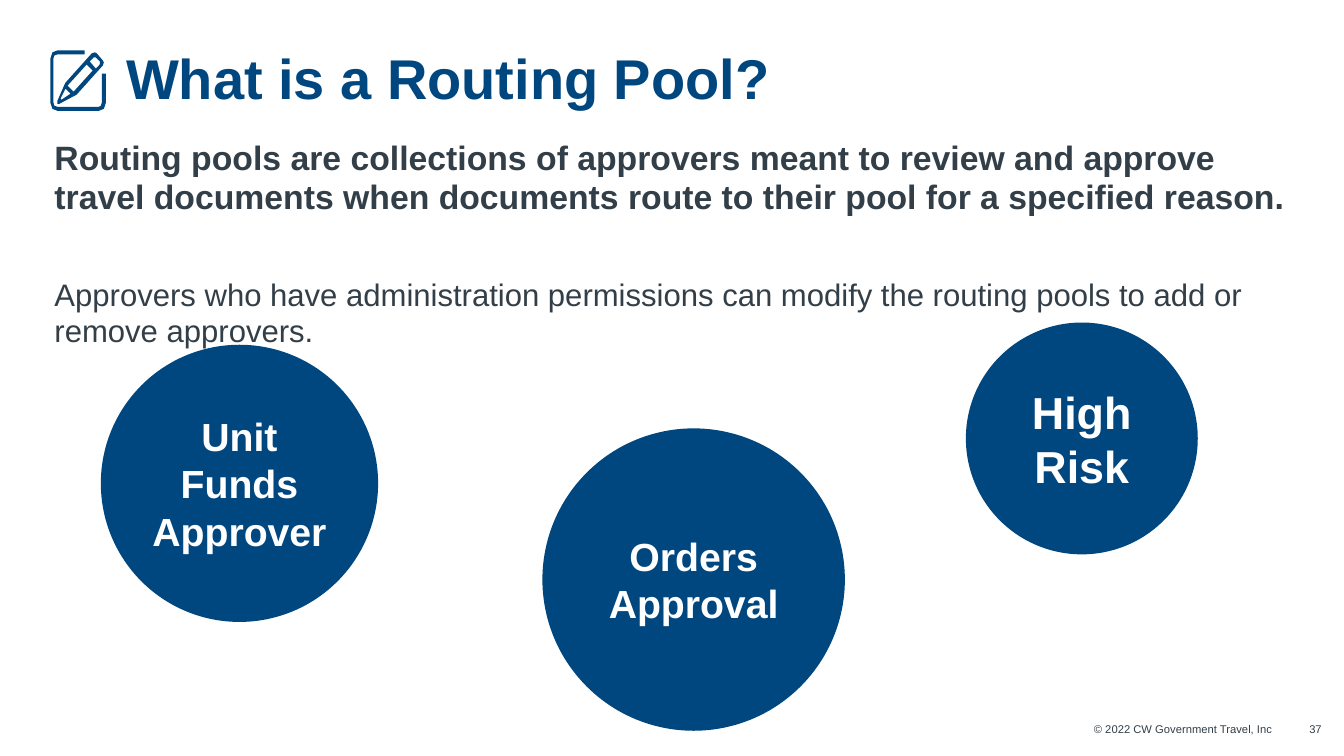
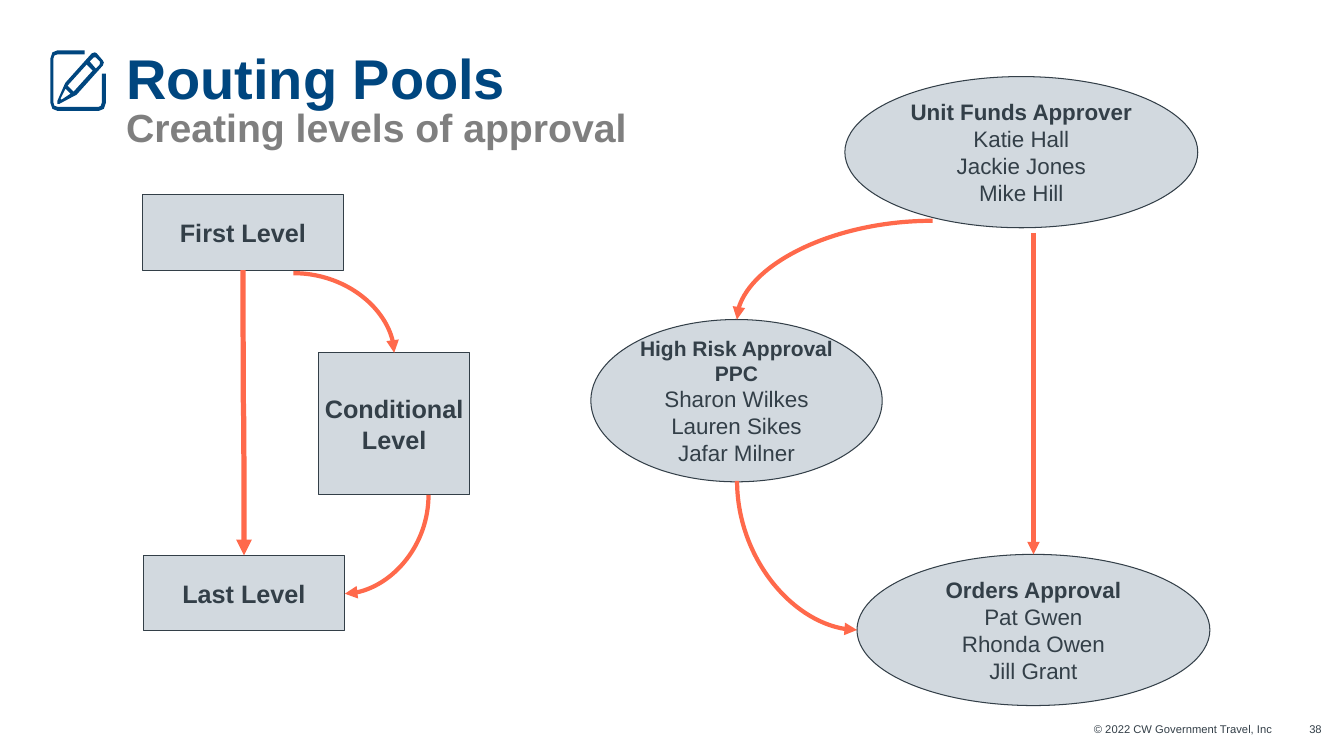
from lxml.etree import SubElement
from pptx import Presentation
from pptx.dml.color import RGBColor
from pptx.enum.shapes import MSO_CONNECTOR as LINK, MSO_SHAPE as SHAPE
from pptx.enum.text import MSO_ANCHOR as ANCHOR, MSO_AUTO_SIZE as FIT, PP_ALIGN as ALIGN
from pptx.oxml.ns import qn
from pptx.util import Inches, Pt

BLUE, DARK, GREY = "00467F", "333F48", "7F7F7F"
PALE, CORAL, WHITE = "D2D9DF", "FF694B", "FFFFFF"
ICON = [
    [(101, 73), (101, 102), (100, 105), (98, 106), (57, 106), (54, 105), (53, 102),
     (53, 58), (54, 55), (57, 54), (84, 54), (84, 50), (57, 50), (52, 52), (50, 58),
     (50, 102), (52, 108), (57, 110), (98, 110), (103, 108), (105, 102), (105, 73)],
    [(64, 84), (57, 100), (57, 103), (59, 103), (74, 95), (76, 94), (102, 65),
     (103, 62), (102, 60), (96, 53), (94, 52), (91, 53), (65, 82)],
    [(93, 57), (95, 57), (99, 61), (99, 64), (95, 68), (89, 61)],
    [(86, 64), (92, 70), (73, 91), (67, 85)],
    [(70, 93), (61, 99), (60, 98), (65, 88)],
]


def tint(code):
    """Turn a hex string into a colour."""
    return RGBColor.from_string(code)


def apply(item, **vals):
    """Set each named value on the item."""
    for name, val in vals.items():
        setattr(item, name, val)


def style(font, size, code, bold=False):
    """Format a font."""
    apply(font, name="Arial", size=Pt(size), bold=bold)
    font.color.rgb = tint(code)


def place(shape, box):
    """Move and size a shape."""
    for name, val in zip(("left", "top", "width", "height"), box):
        setattr(shape, name, Inches(val))


def trim(frame):
    """Clear the insets of a frame and fix its text at the top."""
    apply(frame, margin_left=0, margin_top=0, margin_right=0, margin_bottom=0,
          word_wrap=True, auto_size=FIT.NONE, vertical_anchor=ANCHOR.TOP)


def fill(frame, rows, **form):
    """Write rows of text, size, colour and weight as paragraphs."""
    for i, (text, *look) in enumerate(rows):
        para = frame.add_paragraph() if i else frame.paragraphs[0]
        para.text = text
        apply(para, **form)
        style(para.font, *look)


def note(slide, text, box):
    """Add a small line of footer text."""
    label = slide.shapes.add_textbox(*map(Inches, box))
    trim(label.text_frame)
    fill(label.text_frame, [(text, 8, DARK)], alignment=ALIGN.RIGHT)


def icon(slide):
    """Draw the pencil and page beside the title."""
    first, *rest = ICON
    pen = slide.shapes.build_freeform(*first[0], scale=Inches(0.01))
    pen.add_line_segments(first[1:])
    for ring in rest:
        pen.move_to(*ring[0])
        pen.add_line_segments(ring[1:])
    shape = pen.convert_to_shape()
    shape.shadow.inherit = False
    shape.fill.solid()
    shape.fill.fore_color.rgb = tint(BLUE)
    shape.line.fill.background()


def start(deck, layout, page, title, sub=""):
    """Add a slide with its title, icon and footer."""
    slide = deck.slides.add_slide(deck.slide_layouts[layout])
    head = slide.shapes.title
    place(head, (1.25, 0.53, 11.53, 0.92))
    trim(head.text_frame)
    para = head.text_frame.paragraphs[0]
    apply(para, alignment=ALIGN.LEFT, line_spacing=0.85)
    run = para.add_run()
    run.text = title
    style(run.font, 40, BLUE, True)
    if sub:
        para.add_line_break()
        run = para.add_run()
        run.text = sub
        style(run.font, 28, GREY, True)
    icon(slide)
    note(slide, "© 2022 CW Government Travel, Inc", (8.38, 7.17, 4.24, 0.14))
    note(slide, str(page), (12.88, 7.17, 0.23, 0.14))
    return slide


def body(slide, rows):
    """Fill the body placeholder with plain paragraphs."""
    hold = slide.placeholders[1]
    place(hold, (0.54, 1.39, 12.24, 1.69))
    trim(hold.text_frame)
    fill(hold.text_frame, rows, line_spacing=0.95, space_before=Pt(44))
    hold.text_frame.paragraphs[0].space_before = Pt(0)
    for para in hold.text_frame.paragraphs:
        props = para._p.get_or_add_pPr()
        apply_none = {"marL": "0", "indent": "0"}
        for name, val in apply_none.items():
            props.set(name, val)
        SubElement(props, qn("a:buNone"))


def node(slide, kind, box, rows, back, edge=None, wrap=False):
    """Add a filled shape with centred text."""
    shape = slide.shapes.add_shape(kind, *map(Inches, box))
    shape.shadow.inherit = False
    shape.fill.solid()
    shape.fill.fore_color.rgb = tint(back)
    if edge:
        shape.line.color.rgb = tint(edge)
        shape.line.width = Pt(0.75)
    else:
        shape.line.fill.background()
    apply(shape.text_frame, word_wrap=wrap, vertical_anchor=ANCHOR.MIDDLE)
    fill(shape.text_frame, rows, alignment=ALIGN.CENTER)


def arrow(slide, ends, kind=LINK.STRAIGHT, width=3):
    """Add a line with a head at its far end."""
    link = slide.shapes.add_connector(kind, *map(Inches, ends))
    link.line.color.rgb = tint(CORAL)
    link.line.width = Pt(width)
    props = link.element.spPr
    SubElement(props.find(qn("a:ln")), qn("a:tailEnd"), type="triangle")
    SubElement(props, qn("a:effectLst"))
    return props


def bend(slide, ends, down=False, form="curvedConnector2", width=3):
    """Add a curved arrow that sets off sideways, or down."""
    x1, y1, x2, y2 = ends
    turn = 0
    if down:
        mid_x, mid_y = (x1 + x2) / 2, (y1 + y2) / 2
        half_w, half_h = abs(y2 - y1) / 2, abs(x2 - x1) / 2
        turn, side = (90, 1) if x2 < x1 else (270, -1)
        ends = (mid_x - side * half_w, mid_y - half_h,
                mid_x + side * half_w, mid_y + half_h)
    props = arrow(slide, ends, LINK.CURVE, width)
    props.find(qn("a:prstGeom")).set("prst", form)
    props.find(qn("a:xfrm")).set("rot", str(turn * 60000))


def pools(deck):
    """Build the slide on what a pool is."""
    slide = start(deck, 1, 37, "What is a Routing Pool?")
    body(slide, [
        ("Routing pools are collections of approvers meant to review and approve "
         "travel documents when documents route to their pool for a specified reason.",
         24.1, DARK, True),
        ("Approvers who have administration permissions can modify the routing pools "
         "to add or remove approvers.", 22.2, DARK),
    ])
    for text, left, top, size, points in [
        ("Unit Funds Approver", 1, 3.42, 2.75, 28),
        ("High Risk", 9.58, 3.2, 2.3, 32),
        ("Orders Approval", 5.38, 4.25, 3, 28),
    ]:
        node(slide, SHAPE.OVAL, (left, top, size, size),
             [(text, points, WHITE, True)], BLUE, wrap=True)


def levels(deck):
    """Build the slide on levels of approval."""
    slide = start(deck, 5, 38, "Routing Pools", "Creating levels of approval")
    for box, *lines in [
        ((1.41, 1.93, 2, 0.75), "First Level"),
        ((1.42, 5.51, 2, 0.75), "Last Level"),
        ((3.16, 3.5, 1.5, 1.41), "Conditional", "Level"),
    ]:
        node(slide, SHAPE.RECTANGLE, box,
             [(line, 18, DARK, True) for line in lines], PALE, DARK)
    for box, size, heads, names in [
        ((8.38, 0.76, 3.5, 1.5), 16, ["Unit Funds Approver"],
         ["Katie Hall", "Jackie Jones", "Mike Hill"]),
        ((8.5, 5.5, 3.5, 1.5), 16, ["Orders Approval"],
         ["Pat Gwen", "Rhonda Owen", "Jill Grant"]),
        ((5.86, 3.17, 2.89, 1.61), 15, ["High Risk Approval", "PPC"],
         ["Sharon Wilkes", "Lauren Sikes", "Jafar Milner"]),
    ]:
        rows = [(head, size, DARK, True) for head in heads]
        rows += [(name, 16, DARK) for name in names]
        node(slide, SHAPE.OVAL, box, rows, PALE, DARK)
    arrow(slide, (10.25, 2.31, 10.25, 5.5))
    bend(slide, (2.41, 2.68, 2.42, 5.51), True, "curvedConnector3", 3.75)
    bend(slide, (2.91, 2.71, 3.91, 3.5))
    bend(slide, (9.25, 2.19, 7.31, 3.17))
    bend(slide, (4.25, 4.91, 3.42, 5.89), True)
    bend(slide, (7.31, 4.77, 8.5, 6.25), True)


def main():
    """Build and save the deck."""
    deck = Presentation()
    apply(deck, slide_width=Inches(13.33), slide_height=Inches(7.5))
    pools(deck)
    levels(deck)
    deck.save("out.pptx")


if __name__ == "__main__":
    main()
